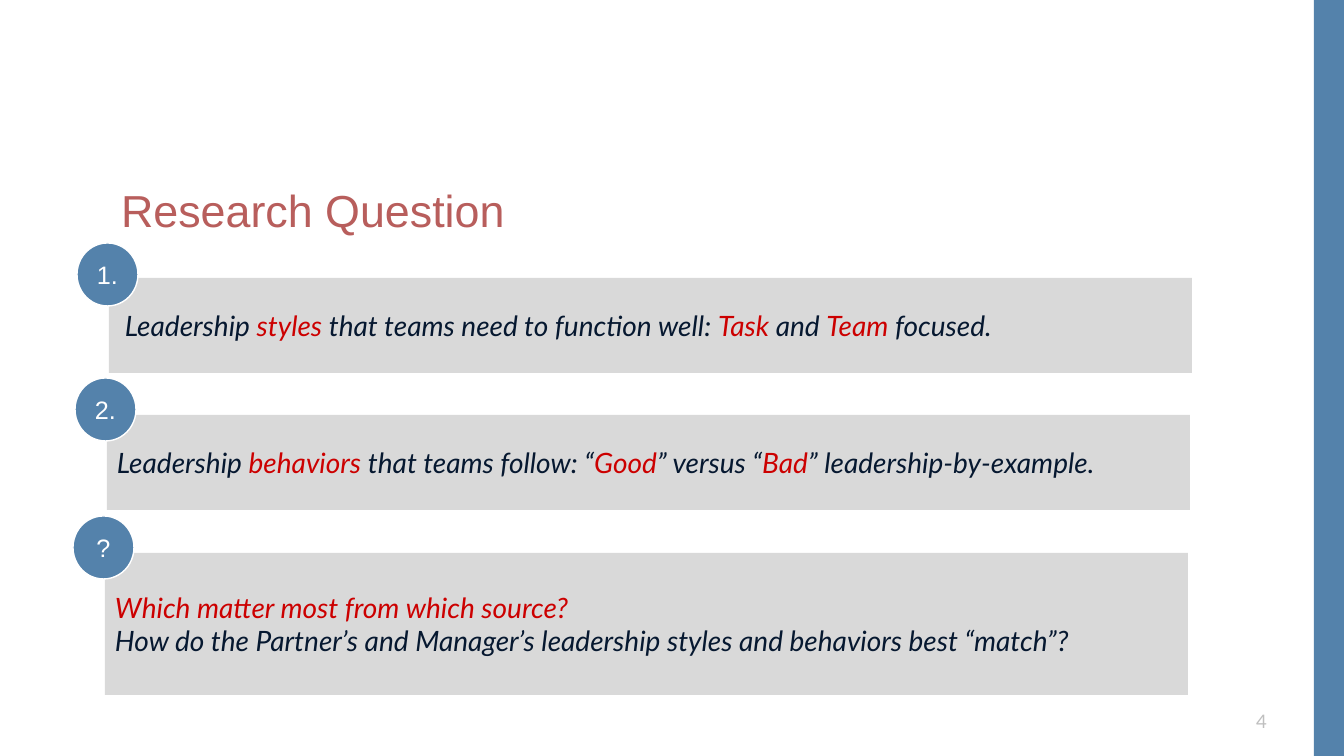
from pptx import Presentation
from pptx.dml.color import RGBColor
from pptx.enum.shapes import MSO_SHAPE
from pptx.enum.text import MSO_ANCHOR, MSO_AUTO_SIZE, PP_ALIGN
from pptx.util import Emu, Pt

COLORS = {
    "blue": "5482AB",
    "rose": "B85E5C",
    "panel": "D9D9D9",
    "ink": "061830",
    "red": "CC0000",
    "white": "FFFFFF",
    "pale": "BFBFBF",
}


def px(length):
    """Turn whole pixels into EMU."""
    return Emu(round(length * 914400 / 100.8))


def rgb(name):
    """Look up a colour by name."""
    return RGBColor.from_string(COLORS[name])


class SlideBuilder:
    """Holds the fonts and the current slide, and draws its elements."""

    heading_font = "Arial"
    body_font = "Lato"

    def __init__(self, slide):
        """Keep the slide to draw on."""
        self.slide = slide

    def style(self, paragraph, font, size, color=None, align=PP_ALIGN.LEFT):
        """Set the alignment and font of a paragraph."""
        paragraph.alignment = align
        paragraph.font.name = font
        paragraph.font.size = Pt(size)
        if color:
            paragraph.font.color.rgb = rgb(color)

    def title(self, text, left, top, width, height):
        """Place and format the title placeholder."""
        heading = self.slide.shapes.title
        heading.left, heading.top = px(left), px(top)
        heading.width, heading.height = px(width), px(height)
        frame = heading.text_frame
        frame.text = text
        frame.auto_size = MSO_AUTO_SIZE.NONE
        frame.vertical_anchor = MSO_ANCHOR.TOP
        frame.paragraphs[0].line_spacing = 0.9
        self.style(frame.paragraphs[0], self.heading_font, 32, "rose")

    def block(self, kind, left, top, width, height, fill):
        """Draw a filled shape without outline or shadow."""
        block = self.slide.shapes.add_shape(
            kind, px(left), px(top), px(width), px(height))
        block.shadow.inherit = False
        block.fill.solid()
        block.fill.fore_color.rgb = rgb(fill)
        block.line.fill.background()
        return block

    def panel(self, left, top, height, lines, inset):
        """Draw a grey panel with lines of coloured phrases."""
        panel = self.block(MSO_SHAPE.RECTANGLE, left, top, 1083, height, "panel")
        frame = panel.text_frame
        frame.word_wrap = True
        frame.vertical_anchor = MSO_ANCHOR.MIDDLE
        frame.margin_left = px(inset)
        for index, phrases in enumerate(lines):
            paragraph = frame.add_paragraph() if index else frame.paragraphs[0]
            self.style(paragraph, self.body_font, 20)
            paragraph.font.italic = True
            for text, color in phrases:
                phrase = paragraph.add_run()
                phrase.text = text
                phrase.font.color.rgb = rgb(color)

    def badge(self, label, left, top):
        """Draw a round badge with a short label."""
        badge = self.block(MSO_SHAPE.OVAL, left, top, 61, 63, "blue")
        badge.line.color.rgb = rgb("white")
        badge.line.width = Pt(1)
        frame = badge.text_frame
        frame.word_wrap = False
        frame.vertical_anchor = MSO_ANCHOR.MIDDLE
        frame.text = label
        self.style(frame.paragraphs[0], self.heading_font, 18, "white",
                   PP_ALIGN.CENTER)

    def page_number(self, number, left, top, width, height):
        """Write the page number."""
        box = self.slide.shapes.add_textbox(
            px(left), px(top), px(width), px(height))
        frame = box.text_frame
        frame.word_wrap = True
        frame.vertical_anchor = MSO_ANCHOR.MIDDLE
        frame.text = number
        self.style(frame.paragraphs[0], self.body_font, 13.3, "pale",
                   PP_ALIGN.RIGHT)


STYLES = [[
    ("Leadership ", "ink"), ("styles ", "red"),
    ("that teams need to function well: ", "ink"), ("Task ", "red"),
    ("and ", "ink"), ("Team ", "red"), ("focused.", "ink"),
]]
BEHAVIORS = [[
    ("Leadership ", "ink"), ("behaviors ", "red"),
    ("that teams follow: “", "ink"), ("Good", "red"),
    ("” versus “", "ink"), ("Bad", "red"),
    ("” leadership-by-example.", "ink"),
]]
QUESTION = [
    [("Which matter most from which source?", "red")],
    [("How do the Partner’s and Manager’s leadership styles and behaviors "
      "best “match”?", "ink")],
]
TOPICS = [
    ("1.", 243, 278, 95, STYLES, 16),
    ("2.", 378, 415, 95, BEHAVIORS, 10),
    ("?", 516, 553, 142, QUESTION, 10),
]


def main():
    """Build and save the slide."""
    deck = Presentation()
    deck.slide_width, deck.slide_height = px(1344), px(756)
    builder = SlideBuilder(deck.slides.add_slide(deck.slide_layouts[5]))
    builder.block(MSO_SHAPE.RECTANGLE, 1314, 0, 30, 756, "blue")
    builder.title("Research Question", 111, 184, 1127, 103)
    for index, (label, badge_top, panel_top, height, lines, inset) in enumerate(TOPICS):
        panel_left = 109 - 2 * index
        builder.panel(panel_left, panel_top, height, lines, inset)
        builder.badge(label, panel_left - 32, badge_top)
    builder.page_number("4", 1207, 701, 70, 40)
    deck.save("out.pptx")


if __name__ == "__main__":
    main()
